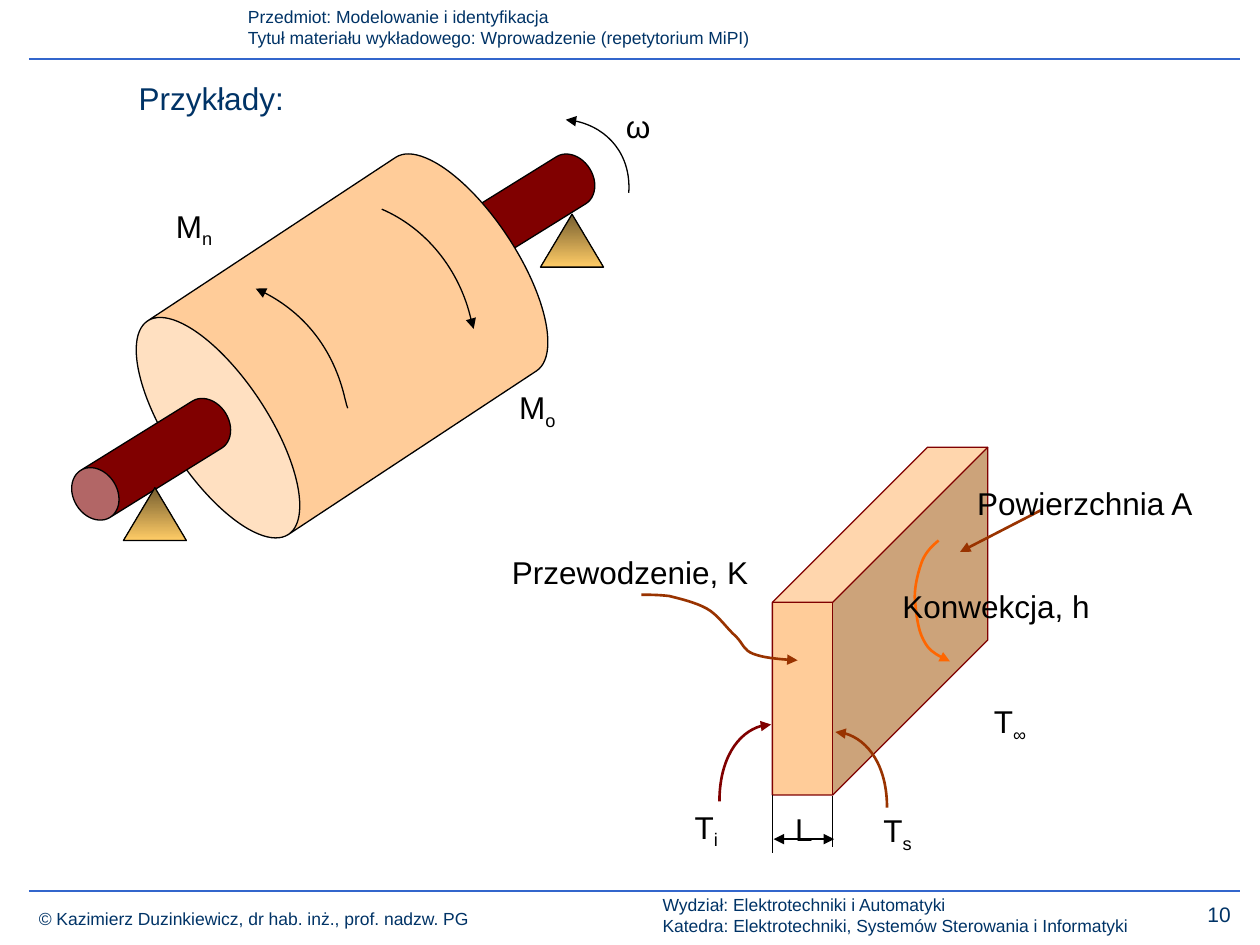
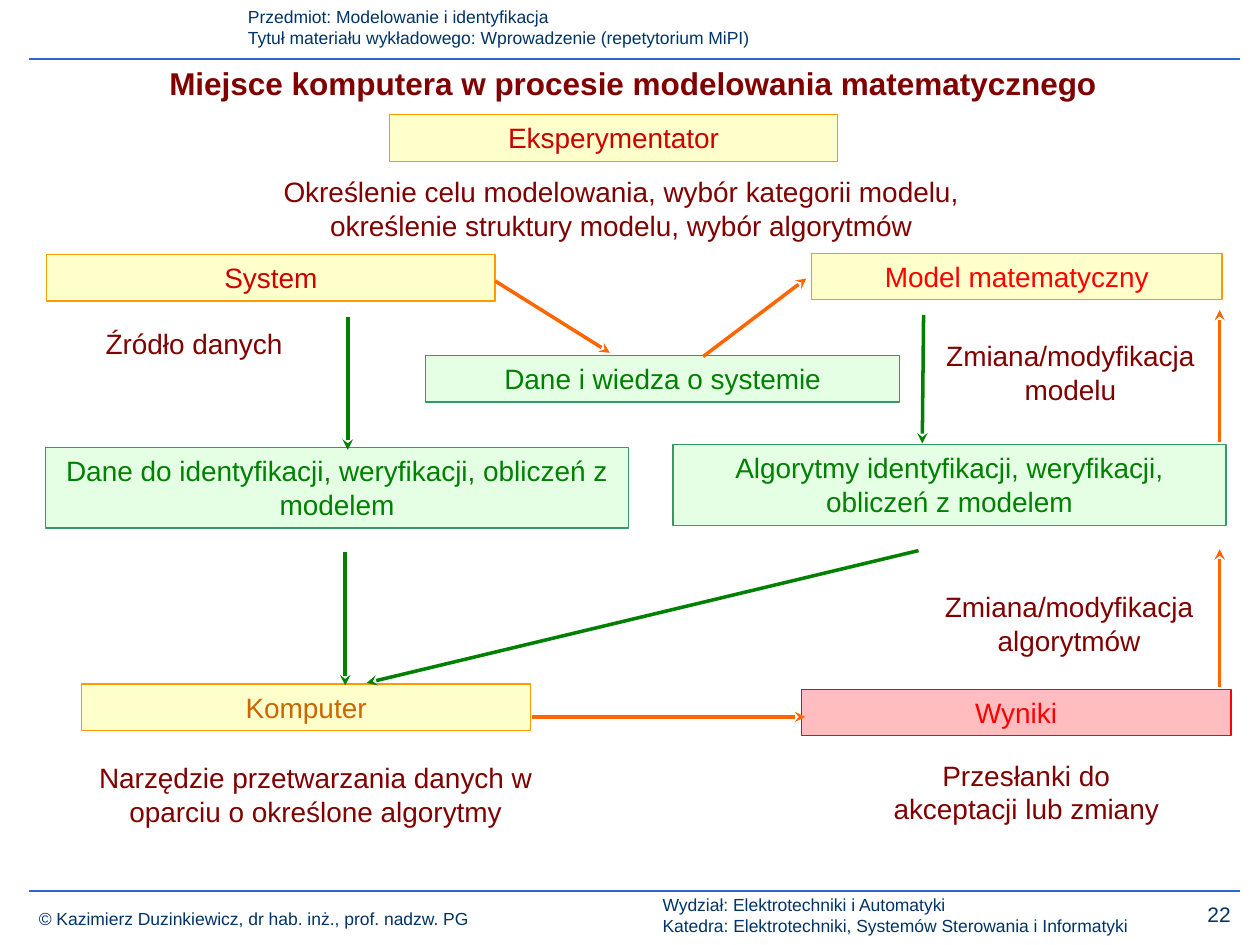
from lxml import etree
from pptx import Presentation
from pptx.dml.color import RGBColor
from pptx.enum import shapes, text
from pptx.oxml.ns import qn
from pptx.util import Pt

PX = 9144  # EMU in one px, 100 px to the inch
FONT = "Arial"
COLORS = {
    "navy": "003366", "rule": "3366CC", "black": "000000", "maroon": "800000",
    "peach": "FFCC99", "gold": "FFCC66", "bronze": "765E2F", "brown": "993300",
    "orange": "FF6600", "amber": "FF9900", "ochre": "CC6600", "yellow": "FFFF99",
    "crimson": "CC0000", "red": "FF0000", "pink": "FF7C80",
    "green": "008000", "sea": "339966", "mint": "CCFFCC",
}
SHAPE = shapes.MSO_SHAPE
LEFT, CENTER = text.PP_ALIGN.LEFT, text.PP_ALIGN.CENTER


def rgb(name):
    return RGBColor.from_string(COLORS[name])


class Deck:
    """The presentation, its shared style and the slide being drawn."""

    def __init__(self):
        self.prs = Presentation()
        self.prs.slide_width, self.prs.slide_height = 1000 * PX, 750 * PX
        self.slide = None

    def new_slide(self, number, title, box, color, bold=False, align=LEFT):
        self.slide = self.prs.slides.add_slide(self.prs.slide_layouts[5])
        sp = self.slide.shapes.title
        sp.left, sp.top, sp.width, sp.height = (v * PX for v in box)
        self.set_text(sp, title, 18, color, align, bold)
        self.frame(number)

    def frame(self, number):
        """Header, footer and the two rules every slide has."""
        self.label((187, 0, 813, 44), "Przedmiot: Modelowanie i identyfikacja\n"
                   "Tytuł materiału wykładowego: Wprowadzenie (repetytorium MiPI)",
                   10, "navy", LEFT)
        for y in (47, 707):
            self.line((23, y), (984, y), "rule", 1.25)
        self.label((21, 716, 402, 27),
                   "© Kazimierz Duzinkiewicz, dr hab. inż., prof. nadzw. PG",
                   10, "navy", LEFT)
        self.label((516, 705, 445, 44), "Wydział: Elektrotechniki i Automatyki\n"
                   "Katedra: Elektrotechniki, Systemów Sterowania i Informatyki",
                   10, "navy", LEFT)
        self.label((935, 711, 65, 30), str(number), 12, "navy")

    def set_text(self, sp, words, size, color, align=CENTER, bold=False, sub=""):
        tf = sp.text_frame
        tf.text = words
        tf.word_wrap = True
        tf.auto_size = text.MSO_AUTO_SIZE.NONE
        tf.vertical_anchor = text.MSO_ANCHOR.TOP
        if sub:
            r = tf.paragraphs[0].add_run()
            r.text = sub
            r._r.get_or_add_rPr().set("baseline", "-25000")
        for p in tf.paragraphs:
            p.alignment = align
            for r in p.runs:
                r.font.name, r.font.size, r.font.bold = FONT, Pt(size), bold
                r.font.color.rgb = rgb(color)

    def label(self, box, words, size=16, color="maroon", align=CENTER, sub=""):
        sp = self.slide.shapes.add_textbox(*(v * PX for v in box))
        self.set_text(sp, words, size, color, align, sub=sub)

    def shape(self, kind, box, fill, line, adjust=None, turn=0):
        sp = self.slide.shapes.add_shape(kind, *(v * PX for v in box))
        sp.shadow.inherit = False
        sp.rotation = turn
        if adjust is not None:
            sp.adjustments[0] = adjust
        sp.fill.solid()
        sp.fill.fore_color.rgb = rgb(fill)
        self.stroke(sp, line, 0.75)
        return sp

    def support(self, x, y):
        """Bearing support: a triangle shaded from top to bottom."""
        sp = self.shape(SHAPE.ISOSCELES_TRIANGLE, (x, y, 50, 42), "gold", "black")
        sp.fill.gradient()
        sp.fill.gradient_angle = 270
        for stop, color in zip(sp.fill.gradient_stops, ("bronze", "gold")):
            stop.color.rgb = rgb(color)

    def block(self, box, words, color, fill, line):
        """Labelled rectangle with a half-transparent fill."""
        sp = self.shape(SHAPE.RECTANGLE, box, fill, line)
        tint = sp._element.spPr.find(qn("a:solidFill"))[0]
        etree.SubElement(tint, qn("a:alpha"), val="50000")
        self.set_text(sp, words, 16, color)

    def stroke(self, sp, color, width, head=None, tail=None):
        sp.line.color.rgb = rgb(color)
        sp.line.width = Pt(width)
        ln = sp._element.spPr.find(qn("a:ln"))
        for tag, kind in (("a:headEnd", head), ("a:tailEnd", tail)):
            if kind:
                etree.SubElement(ln, qn(tag), type=kind)

    def line(self, start, end, color, width, head=None, tail=None):
        ends = (v * PX for v in (*start, *end))
        sp = self.slide.shapes.add_connector(shapes.MSO_CONNECTOR.STRAIGHT, *ends)
        self.stroke(sp, color, width, head, tail)
        etree.SubElement(sp._element.spPr, qn("a:effectLst"))

    def curve(self, points, color="black", width=0.75, head=None, tail=None):
        """Bezier line: a start point, then three points for each segment."""
        builder = self.slide.shapes.build_freeform(*points[0], scale=PX)
        builder.add_line_segments(points[1:], close=False)
        sp = builder.convert_to_shape()
        outline = sp._element.xpath(".//a:path")[0]
        steps = outline.findall(qn("a:lnTo"))
        for i in range(0, len(steps), 3):
            bezier = etree.SubElement(outline, qn("a:cubicBezTo"))
            for step in steps[i:i + 3]:
                bezier.append(step[0])
                outline.remove(step)
        sp.shadow.inherit = False
        sp.fill.background()
        self.stroke(sp, color, width, head, tail)


def draw_rotor(deck):
    cans = (((387, 101, 44, 139), "maroon", 0.79, 238.2),
            ((170, 117, 203, 315), "peach", 0.39, 236.6),
            ((98, 295, 44, 139), "maroon", 0.79, 238.2))
    for box, fill, depth, turn in cans:
        deck.shape(SHAPE.CAN, box, fill, "black", depth, turn)
    deck.support(98, 387)
    deck.support(429, 170)

    torque = [(203, 229), (238, 244), (265, 277), (274, 317),
              (275, 320), (275, 322), (276, 324)]
    deck.curve(torque, head="triangle")
    deck.curve([(x + 100, y - 63) for x, y in torque], tail="triangle")
    deck.curve([(449, 95), (479, 97), (501, 123), (499, 153)], head="triangle")

    deck.label((120, 159, 68, 49), "M", 18, "black", sub="n")
    deck.label((393, 303, 67, 54), "M", 18, "black", sub="o")
    deck.label((473, 80, 67, 41), "ω", 18, "black")


def draw_wall(deck):
    deck.shape(SHAPE.CUBE, (613, 355, 171, 276), "peach", "maroon", 0.72)
    deck.line((613, 631), (613, 677), "black", 0.75)
    deck.line((661, 632), (661, 672), "black", 0.75)
    deck.line((614, 666), (662, 666), "black", 0.75, "triangle", "triangle")
    deck.line((826, 405), (762, 438), "brown", 1.5, tail="triangle")

    deck.curve([(663, 581), (685, 581), (704, 608), (704, 641)],
               "brown", 1.5, head="triangle")
    deck.curve([(612, 575), (589, 575), (571, 603), (571, 636)],
               "maroon", 1.5, head="triangle")
    conduction = [(509, 472), (515, 472), (522, 472), (531, 473),
                  (539, 475), (552, 478), (561, 483), (570, 488),
                  (577, 499), (584, 505), (590, 511), (590, 516),
                  (598, 519), (606, 522), (627, 524), (633, 524)]
    convection = [(745, 429), (740, 433), (735, 438), (732, 445),
                  (729, 453), (726, 464), (726, 474), (727, 485),
                  (728, 499), (733, 508), (737, 516), (745, 521), (754, 525)]
    deck.curve(conduction, "brown", 1.5, tail="triangle")
    deck.curve(convection, "orange", 1.5, tail="triangle")

    for box, words, sub in (
            ((610, 638, 56, 32), "L", ""),
            ((763, 379, 196, 32), "Powierzchnia A", ""),
            ((676, 639, 73, 36), "T", "s"),
            ((524, 636, 73, 59), "T", "i"),
            ((759, 552, 85, 43), "T", "∞"),
            ((389, 434, 222, 39), "Przewodzenie, K", ""),
            ((701, 461, 179, 32), "Konwekcja, h", "")):
        deck.label(box, words, 18, "black", sub=sub)


def draw_modelling_process(deck):
    actor, data, result = ("yellow", "amber"), ("mint", "sea"), ("pink", "red")
    for box, words, color, look in (
            ((37, 202, 356, 37), "System", "crimson", actor),
            ((309, 91, 356, 37), "Eksperymentator", "crimson", actor),
            ((644, 201, 326, 37), "Model matematyczny", "red", actor),
            ((65, 543, 356, 37), "Komputer", "ochre", actor),
            ((636, 547, 341, 37), "Wyniki", "red", result),
            ((534, 353, 439, 64),
             "Algorytmy identyfikacji, weryfikacji, obliczeń z modelem", "green", data),
            ((36, 355, 463, 64),
             "Dane do identyfikacji, weryfikacji, obliczeń z modelem", "green", data),
            ((338, 282, 376, 37), "Dane i wiedza o systemie", "green", data)):
        deck.block(box, words, color, *look)

    arrows = {
        "orange": (((393, 223), (484, 280)), ((558, 283), (640, 221)),
                   ((422, 569), (639, 569)), ((968, 545), (968, 436)),
                   ((968, 351), (968, 246))),
        "green": (((276, 252), (276, 357)), ((733, 250), (732, 352)),
                  ((274, 438), (274, 544)), ((729, 437), (291, 542))),
    }
    for color, routes in arrows.items():
        for start, end in routes:
            deck.line(start, end, color, 2, tail="stealth")

    for box, words in (
            ((162, 134, 662, 64), "Określenie celu modelowania, wybór kategorii modelu, "
                                  "określenie struktury modelu, wybór algorytmów"),
            ((59, 254, 190, 37), "Źródło danych"),
            ((53, 599, 395, 64),
             "Narzędzie przetwarzania danych w oparciu o określone algorytmy"),
            ((686, 597, 257, 64), "Przesłanki do akceptacji lub zmiany"),
            ((721, 463, 255, 64), "Zmiana/modyfikacja algorytmów"),
            ((722, 264, 255, 64), "Zmiana/modyfikacja modelu")):
        deck.label(box, words)


def main():
    deck = Deck()
    deck.new_slide(10, "Przykłady:", (100, 58, 178, 40), "navy")
    draw_rotor(deck)
    draw_wall(deck)
    deck.new_slide(22, "Miejsce komputera w procesie modelowania matematycznego",
                   (64, 46, 877, 40), "maroon", bold=True, align=CENTER)
    draw_modelling_process(deck)
    deck.prs.save("out.pptx")


if __name__ == "__main__":
    main()
